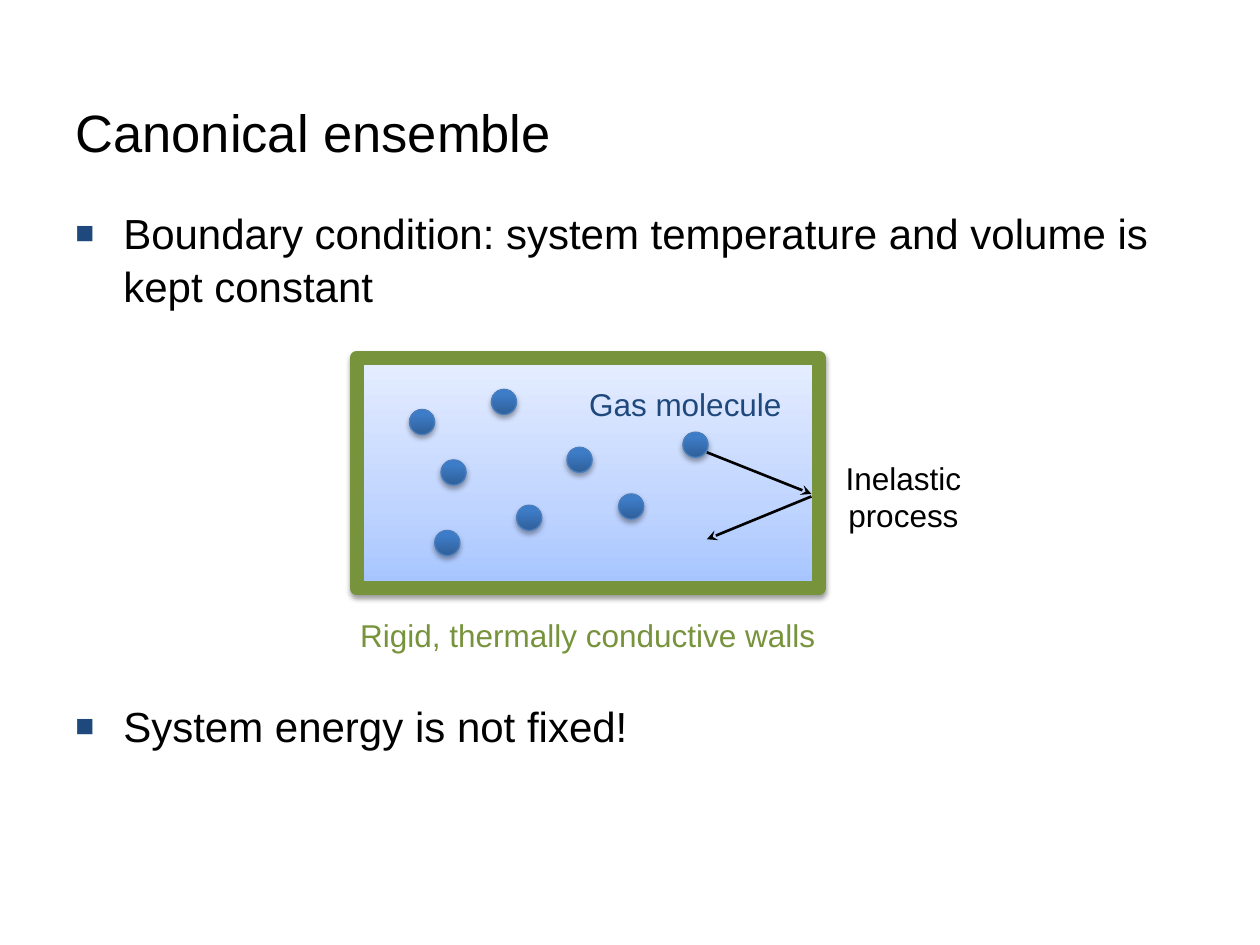
from lxml import etree
from pptx import Presentation
from pptx import util as u
from pptx.dml import color
from pptx.enum import shapes, text
from pptx.oxml import ns

GREEN, NAVY, BLACK = "77933C", "1F497D", "000000"
GAS = [(0, "A4C4FF"), (35, "BFD4FF"), (100, "E6EEFF")]
BALL = [(0, "2F5F99"), (80, "3D7CC7"), (100, "3A7CCB")]
SPOTS = [(54.2, 34.3), (35, 36.5), (41, 40.1), (39, 30.9),
         (49.1, 39.2), (32.5, 32.5), (45, 35.5), (34.5, 42.1)]


def rgb(code):
    return color.RGBColor.from_string(code)


def add(node, tag, **vals):
    kid = etree.SubElement(node, ns.qn("a:" + tag))
    for key, val in vals.items():
        kid.set(key, str(val))
    return kid


class Deck:
    cols, rows, font = 100, 75, "Arial"

    def __init__(self, wide, high):
        self.deck = Presentation()
        self.deck.slide_width = u.Inches(wide)
        self.deck.slide_height = u.Inches(high)
        self.page = self.deck.slides.add_slide(self.deck.slide_layouts[6])

    def place(self, *grid):
        sides = (self.deck.slide_width / self.cols,
                 self.deck.slide_height / self.rows)
        return [round(val * sides[i % 2]) for i, val in enumerate(grid)]

    def label(self, at, lines, size=18, tint=BLACK, wrap=True,
              align=text.PP_ALIGN.CENTER, anchor=text.MSO_ANCHOR.TOP,
              bullet=None, gap=0, lead=None):
        frame = self.page.shapes.add_textbox(*self.place(*at)).text_frame
        frame.word_wrap = wrap
        frame.vertical_anchor = anchor
        for i, line in enumerate(lines):
            para = frame.paragraphs[0] if i == 0 else frame.add_paragraph()
            para.text = line
            if bullet:
                self.mark(para, bullet)
            look = {"alignment": align, "line_spacing": lead,
                    "space_before": u.Pt(gap if i else 0)}
            for key, val in look.items():
                setattr(para, key, val)
            for key, val in {"name": self.font, "size": u.Pt(size)}.items():
                setattr(para.runs[0].font, key, val)
            para.runs[0].font.color.rgb = rgb(tint)

    def mark(self, para, sign):
        props = para._p.get_or_add_pPr()
        props.set("marL", str(u.Inches(0.38)))
        props.set("indent", str(-u.Inches(0.38)))
        add(add(props, "buClr"), "srgbClr", val=NAVY)
        add(props, "buSzPct", val=75000)
        add(props, "buFont", typeface=self.font)
        add(props, "buChar", char=sign)

    def solid(self, kind, at, stops, edge, width, dark, drop):
        item = self.page.shapes.add_shape(kind, *self.place(*at))
        item.fill.gradient()
        item.fill.gradient_angle = 90
        props = item._element.spPr
        ramp = props.find(".//" + ns.qn("a:gsLst"))
        for stop in list(ramp):
            ramp.remove(stop)
        for pos, code in stops:
            add(add(ramp, "gs", pos=pos * 1000), "srgbClr", val=code)
        item.line.color.rgb = rgb(edge)
        item.line.width = u.Pt(width)
        item.shadow.inherit = False
        shade = add(props.find(ns.qn("a:effectLst")), "outerShdw",
                    blurRad=u.Pt(3.1), dist=u.Pt(drop), dir=5400000,
                    rotWithShape=0)
        add(add(shade, "srgbClr", val=BLACK), "alpha", val=dark * 1000)

    def arrow(self, *ends):
        item = self.page.shapes.add_connector(
            shapes.MSO_CONNECTOR.STRAIGHT, *self.place(*ends))
        item.line.color.rgb = rgb(BLACK)
        item.line.width = u.Pt(1.5)
        add(item.line._get_or_add_ln(), "tailEnd", type="stealth")
        add(item._element.spPr, "effectLst")

    def save(self):
        self.deck.save("out.pptx")


def main():
    deck = Deck(10, 7.5)
    left = text.PP_ALIGN.LEFT
    deck.label((5, 5, 89.2, 10.8), ["Canonical ensemble"], 30,
               align=left, anchor=text.MSO_ANCHOR.MIDDLE)
    deck.label((5, 15.8, 89.2, 52.5),
               ["Boundary condition: system temperature and volume is kept constant",
                "System energy is not fixed!"],
               24, align=left, bullet="■", gap=221, lead=1.05)
    deck.solid(shapes.MSO_SHAPE.RECTANGLE, (28.3, 28.4, 36.7, 18.3),
               GAS, GREEN, 8, 38, 1.6)
    for x, y in SPOTS:
        deck.solid(shapes.MSO_SHAPE.OVAL, (x, y, 2, 2),
                   BALL, "4B7EBC", 0.75, 35, 1.8)
    deck.arrow(56.1, 35.9, 64.4, 39.2)
    deck.arrow(64.4, 39.4, 56.1, 42.8)
    deck.label((66.1, 35.9, 11.2, 7.1), ["Inelastic process"])
    deck.label((27.4, 48.4, 38.5, 4), ["Rigid, thermally conductive walls"],
               tint=GREEN, wrap=False)
    deck.label((45.7, 30.1, 17.4, 4), ["Gas molecule"], tint=NAVY, wrap=False)
    deck.save()


if __name__ == "__main__":
    main()
